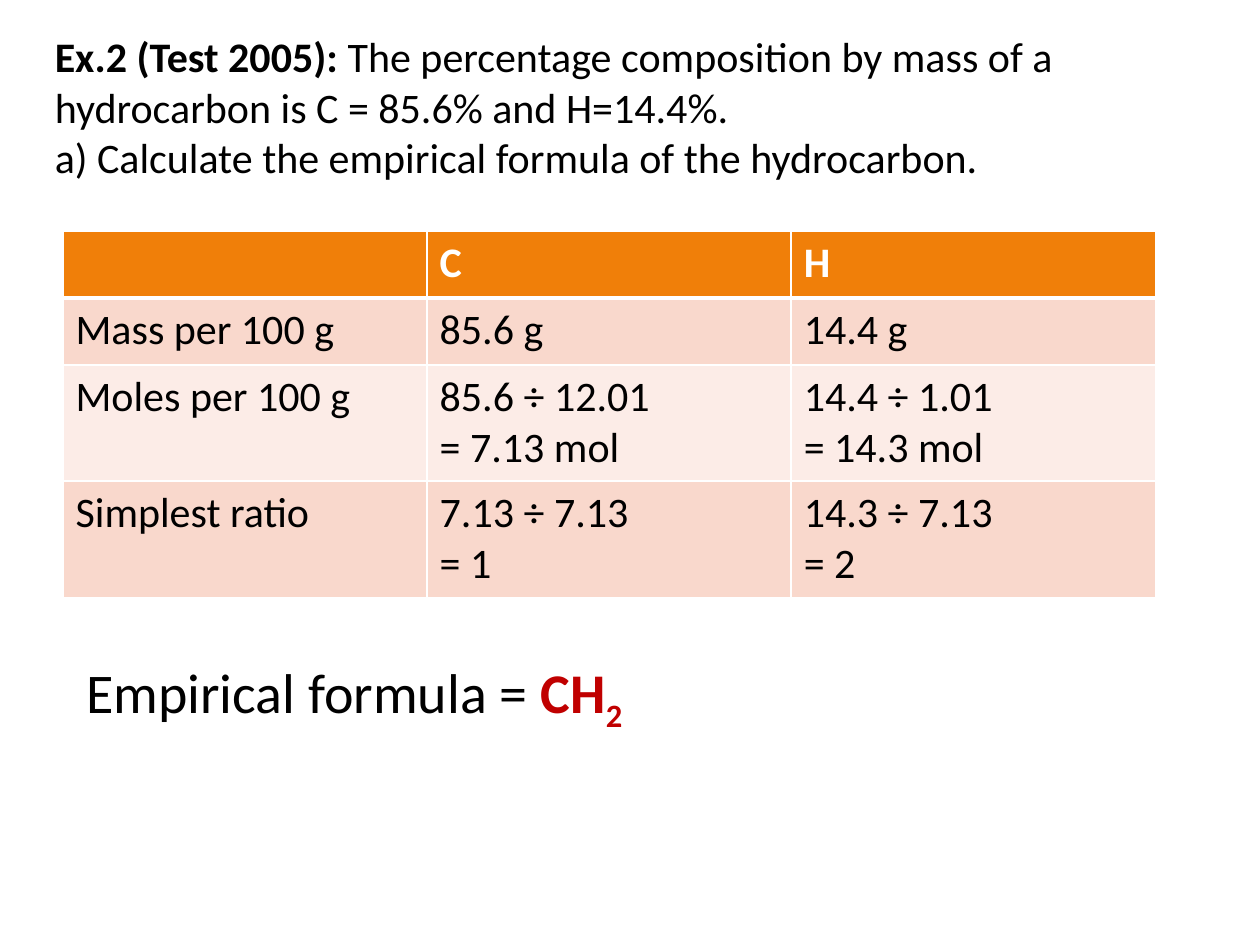
from dataclasses import dataclass
from lxml import etree
from pptx import Presentation
from pptx import util as u
from pptx.dml import color
from pptx.enum import text
from pptx.oxml import ns


@dataclass
class Theme:
    font: str = "Calibri"
    size: int = 24
    large: int = 32
    ink: str = "000000"
    white: str = "FFFFFF"
    red: str = "C00000"
    head: str = "F07F09"
    odd: str = "F9D8CC"
    even: str = "FCECE7"


def add_run(para, words, size, ink, bold=False):
    run = para.add_run()
    run.text = words
    font = run.font
    font.name, font.size, font.bold = theme.font, u.Pt(size), bold
    font.color.rgb = color.RGBColor.from_string(ink)
    return run


def add_edge(cell, side, width):
    edge = etree.SubElement(cell._tc.get_or_add_tcPr(), ns.qn("a:ln" + side), w=str(u.Pt(width)))
    fill = etree.SubElement(edge, ns.qn("a:solidFill"))
    etree.SubElement(fill, ns.qn("a:srgbClr"), val=theme.white)


theme = Theme()
deck = Presentation()
deck.slide_width, deck.slide_height = u.Cm(25.4), u.Cm(19.05)
slide = deck.slides.add_slide(deck.slide_layouts[1])

title, body = slide.placeholders
title.left, title.top, title.width, title.height = u.Cm(0.85), u.Cm(1.06), u.Cm(23.92), u.Cm(3.18)
frame = title.text_frame
frame.auto_size = text.MSO_AUTO_SIZE.NONE
frame.vertical_anchor = text.MSO_ANCHOR.MIDDLE
frame.margin_bottom = u.Cm(1.13)
para = frame.paragraphs[0]
para.alignment = text.PP_ALIGN.LEFT
add_run(para, "Ex.2 (Test 2005): ", theme.size, theme.ink, True)
add_run(para, "The percentage composition by mass of a hydrocarbon is C = 85.6% and H=14.4%.",
        theme.size, theme.ink)
para.add_line_break()
add_run(para, "a) Calculate the empirical formula of the hydrocarbon.", theme.size, theme.ink)

body.left, body.top, body.width, body.height = u.Cm(1.48), u.Cm(13.12), u.Cm(22.86), u.Cm(2.33)
body.text_frame.auto_size = text.MSO_AUTO_SIZE.NONE
para = body.text_frame.paragraphs[0]
props = para._p.get_or_add_pPr()
props.set("marL", "0")
props.set("indent", "0")
etree.SubElement(props, ns.qn("a:buNone"))
add_run(para, "Empirical formula = ", theme.large, theme.ink)
add_run(para, "CH", theme.large, theme.red, True)
sub = add_run(para, "2", theme.large, theme.red, True)
sub._r.get_or_add_rPr().set("baseline", "-25000")

rows = [
    ["", "C", "H"],
    ["Mass per 100 g", "85.6 g", "14.4 g"],
    ["Moles per 100 g", "85.6 ÷ 12.01\n= 7.13 mol", "14.4 ÷ 1.01\n= 14.3 mol"],
    ["Simplest ratio", "7.13 ÷ 7.13\n= 1", "14.3 ÷ 7.13\n= 2"],
]
highs = [1.35, 1.35, 2.34, 2.34]
fills = [theme.head, theme.odd, theme.even, theme.odd]
table = slide.shapes.add_table(
    len(rows), 3, u.Cm(1.27), u.Cm(4.66), u.Cm(22.02), u.Cm(sum(highs))).table
for col in table.columns:
    col.width = u.Cm(7.34)

for r, (row, high, fill) in enumerate(zip(rows, highs, fills)):
    table.rows[r].height = u.Cm(high)
    ink = theme.ink if r else theme.white
    for c, words in enumerate(row):
        cell = table.cell(r, c)
        for side in "LRTB":
            add_edge(cell, side, 3 if (r, side) in [(0, "B"), (1, "T")] else 1)
        cell.fill.solid()
        cell.fill.fore_color.rgb = color.RGBColor.from_string(fill)
        for i, line in enumerate(words.splitlines()):
            para = cell.text_frame.add_paragraph() if i else cell.text_frame.paragraphs[0]
            add_run(para, line, theme.size, ink, r == 0)

deck.save("out.pptx")
